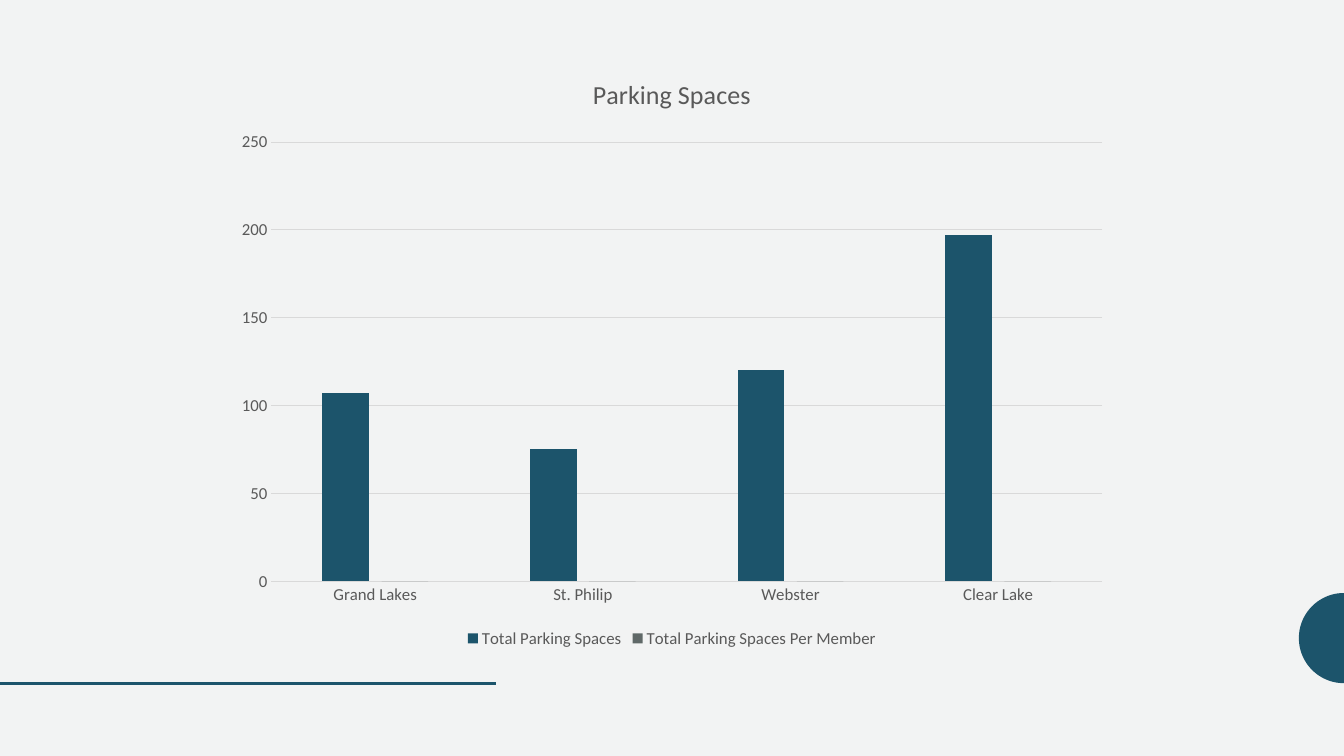
from math import cos, pi, sin

from lxml.etree import SubElement
from pptx import Presentation
from pptx.chart.data import CategoryChartData
from pptx.dml.color import RGBColor
from pptx.enum.chart import XL_CHART_TYPE as ChartType
from pptx.enum.chart import XL_LEGEND_POSITION as LegendPosition
from pptx.enum.chart import XL_TICK_MARK as TickMark
from pptx.enum.shapes import MSO_CONNECTOR as Connector
from pptx.oxml.ns import qn
from pptx.util import Pt

PAPER = RGBColor(0xF2, 0xF3, 0xF3)
TEAL = RGBColor(0x1C, 0x54, 0x6B)
SLATE = RGBColor(0x60, 0x69, 0x68)
TEXT_GREY = RGBColor(0x59, 0x59, 0x59)
GRID_GREY = RGBColor(0xD9, 0xD9, 0xD9)
FONT = "Calibri"
WIDTH, HEIGHT = 960, 540

CAMPUSES = ["Grand Lakes", "St. Philip", "Webster", "Clear Lake"]
SERIES = [
    ("Total Parking Spaces", [107, 75, 120, 197], TEAL),
    ("Total Parking Spaces Per Member", [0, 0, 0, 0], SLATE),
]


def style_font(font, size):
    font.name = FONT
    font.size = Pt(size)
    font.bold = False
    font.color.rgb = TEXT_GREY


def style_line(line, color, width):
    line.color.rgb = color
    line.width = Pt(width)


def add_decoration(page, left, top, width, height):
    radius = 32.2
    right, bottom = left + width, top + height
    center = bottom - radius
    steps = 60
    angles = [pi / 2 + pi * step / steps for step in range(steps + 1)]
    points = [
        (Pt(right + radius * cos(angle)), Pt(center - radius * sin(angle)))
        for angle in angles
    ]
    builder = page.shapes.build_freeform(*points[0], scale=1.0)
    builder.add_line_segments(points[1:], close=True)
    half_circle = builder.convert_to_shape()
    half_circle.shadow.inherit = False
    half_circle.fill.solid()
    half_circle.fill.fore_color.rgb = TEAL
    half_circle.line.fill.background()

    rule = page.shapes.add_connector(
        Connector.STRAIGHT, Pt(left), Pt(bottom), Pt(left + 354.4), Pt(bottom)
    )
    style_line(rule.line, TEAL, 2)
    SubElement(rule._element.spPr, qn("a:effectLst"))


def add_parking_chart(page, left, top, width, height):
    data = CategoryChartData()
    data.categories = CAMPUSES
    for name, values, _ in SERIES:
        data.add_series(name, values)
    frame = page.shapes.add_chart(
        ChartType.COLUMN_CLUSTERED, Pt(left), Pt(top), Pt(width), Pt(height), data
    )
    chart = frame.chart
    style_font(chart.font, 12)

    chart.has_title = True
    title = chart.chart_title
    title.include_in_layout = False
    title.text_frame.text = "Parking Spaces"
    style_font(title.text_frame.paragraphs[0].runs[0].font, 18.6)

    chart.has_legend = True
    chart.legend.position = LegendPosition.BOTTOM
    chart.legend.include_in_layout = False
    style_font(chart.legend.font, 12)

    for axis in (chart.category_axis, chart.value_axis):
        axis.major_tick_mark = TickMark.NONE
        axis.minor_tick_mark = TickMark.NONE
        style_font(axis.tick_labels.font, 12)
    style_line(chart.category_axis.format.line, GRID_GREY, 0.75)
    value_axis = chart.value_axis
    value_axis.format.line.fill.background()
    value_axis.minimum_scale = 0
    value_axis.maximum_scale = 250
    value_axis.major_unit = 50
    style_line(value_axis.major_gridlines.format.line, GRID_GREY, 0.75)

    plot = chart.plots[0]
    plot.gap_width = 219
    plot.overlap = -27
    plot.vary_by_categories = False
    for series, (_, _, color) in zip(plot.series, SERIES):
        series.invert_if_negative = False
        series.format.fill.solid()
        series.format.fill.fore_color.rgb = color


def main():
    deck = Presentation()
    deck.slide_width = Pt(WIDTH)
    deck.slide_height = Pt(HEIGHT)
    page = deck.slides.add_slide(deck.slide_layouts[6])
    page.background.fill.solid()
    page.background.fill.fore_color.rgb = PAPER
    add_decoration(page, 0, 0, WIDTH, 488)
    add_parking_chart(page, 160, 39, 640, 427)
    deck.save("out.pptx")


if __name__ == "__main__":
    main()
